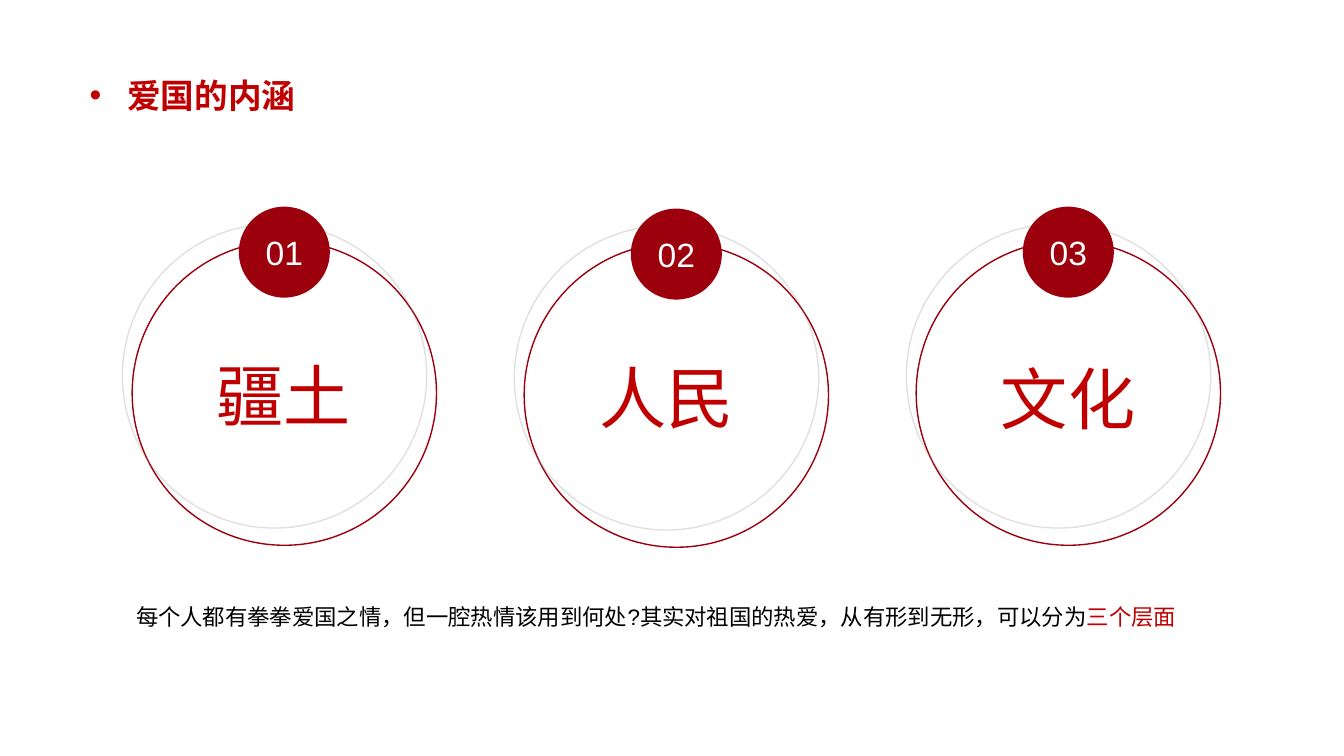
from dataclasses import dataclass

from lxml import etree
from pptx import Presentation
from pptx import util as u
from pptx.dml.color import RGBColor
from pptx.enum import shapes, text
from pptx.oxml import ns
from pptx.shapes.autoshape import Shape
from pptx.slide import Slide
from pptx.text.text import TextFrame

FONT = "Arial"
RED = RGBColor(0xC0, 0x00, 0x00)
DARK_RED = RGBColor(0x9C, 0x00, 0x0D)
GRAY = RGBColor(0x80, 0x80, 0x80)
BLACK = RGBColor(0x00, 0x00, 0x00)
WHITE = RGBColor(0xFF, 0xFF, 0xFF)

RING_SIZE = 217.4
BADGE_SIZE = 65
FIRST_RING_LEFT = 94.4
RING_PITCH = 280
ECHO_SHIFT_LEFT = 7
ECHO_SHIFT_UP = 12.3
BADGE_RISE = 24.5


@dataclass(frozen=True)
class Aspect:
    name: str
    ring_top: float
    label_left: float
    label_top: float


ASPECTS = [
    Aspect("疆土", 172.1, 147.6, 249.8),
    Aspect("人民", 173.5, 421.2, 250.6),
    Aspect("文化", 172.1, 707.8, 252),
]


def add_circle(slide: Slide, left: float, top: float, size: float) -> Shape:
    circle = slide.shapes.add_shape(
        shapes.MSO_SHAPE.OVAL, u.Pt(left), u.Pt(top), u.Pt(size), u.Pt(size)
    )
    circle.shadow.inherit = False
    return circle


def add_ring(slide: Slide, left: float, top: float, color: RGBColor) -> Shape:
    ring = add_circle(slide, left, top, RING_SIZE)
    ring.fill.background()
    ring.line.color.rgb = color
    ring.line.width = u.Pt(1)
    return ring


def set_line_opacity(shape: Shape, percent: int) -> None:
    color = shape.line._ln.find(".//" + ns.qn("a:srgbClr"))
    etree.SubElement(color, ns.qn("a:alpha"), val=str(percent * 1000))


def style_text(frame: TextFrame, size: float, color: RGBColor, bold: bool = False) -> None:
    for run in frame.paragraphs[0].runs:
        run.font.name = FONT
        run.font.size = u.Pt(size)
        run.font.bold = bold
        run.font.color.rgb = color


def add_text(
    slide: Slide, left: float, top: float, width: float, height: float, wording: str
) -> TextFrame:
    box = slide.shapes.add_textbox(u.Pt(left), u.Pt(top), u.Pt(width), u.Pt(height))
    frame = box.text_frame
    frame.word_wrap = True
    frame.text = wording
    return frame


def add_title(slide: Slide) -> None:
    frame = add_text(slide, 56.9, 49.7, 210.2, 36, "爱国的内涵")
    paragraph = frame.paragraphs[0]
    paragraph.alignment = text.PP_ALIGN.JUSTIFY
    properties = paragraph._p.get_or_add_pPr()
    properties.set("marL", str(u.Pt(27)))
    properties.set("indent", str(u.Pt(-27)))
    etree.SubElement(properties, ns.qn("a:buFont"), typeface=FONT)
    etree.SubElement(properties, ns.qn("a:buChar"), char="•")
    style_text(frame, 24, RED, bold=True)


def add_aspect(slide: Slide, index: int, aspect: Aspect) -> None:
    left = FIRST_RING_LEFT + index * RING_PITCH
    top = aspect.ring_top
    add_ring(slide, left, top, DARK_RED)
    echo = add_ring(slide, left - ECHO_SHIFT_LEFT, top - ECHO_SHIFT_UP, GRAY)
    set_line_opacity(echo, 24)

    badge_left = left + (RING_SIZE - BADGE_SIZE) / 2
    badge = add_circle(slide, badge_left, top - BADGE_RISE, BADGE_SIZE)
    badge.fill.solid()
    badge.fill.fore_color.rgb = DARK_RED
    badge.line.fill.background()
    frame = badge.text_frame
    frame.text = f"{index + 1:02d}"
    frame.vertical_anchor = text.MSO_ANCHOR.MIDDLE
    frame.paragraphs[0].alignment = text.PP_ALIGN.CENTER
    style_text(frame, 24, WHITE)

    label = add_text(slide, aspect.label_left, aspect.label_top, 118.8, 65.5, aspect.name)
    style_text(label, 48, RED)


def add_summary(slide: Slide) -> None:
    frame = add_text(
        slide, 87.8, 425.5, 784.8, 65.5,
        "每个人都有拳拳爱国之情，但一腔热情该用到何处?其实对祖国的热爱，从有形到无形，可以分为",
    )
    frame.margin_left = frame.margin_right = u.Pt(9.4)
    frame.margin_top = frame.margin_bottom = u.Pt(5)
    paragraph = frame.paragraphs[0]
    paragraph.alignment = text.PP_ALIGN.JUSTIFY
    emphasis = paragraph.add_run()
    emphasis.text = "三个层面"
    style_text(frame, 16, BLACK)
    emphasis.font.color.rgb = RED


def main() -> None:
    presentation = Presentation()
    presentation.slide_width = u.Pt(960)
    presentation.slide_height = u.Pt(540)
    slide = presentation.slides.add_slide(presentation.slide_layouts[6])
    add_summary(slide)
    for index, aspect in enumerate(ASPECTS):
        add_aspect(slide, index, aspect)
    add_title(slide)
    presentation.save("out.pptx")


if __name__ == "__main__":
    main()
